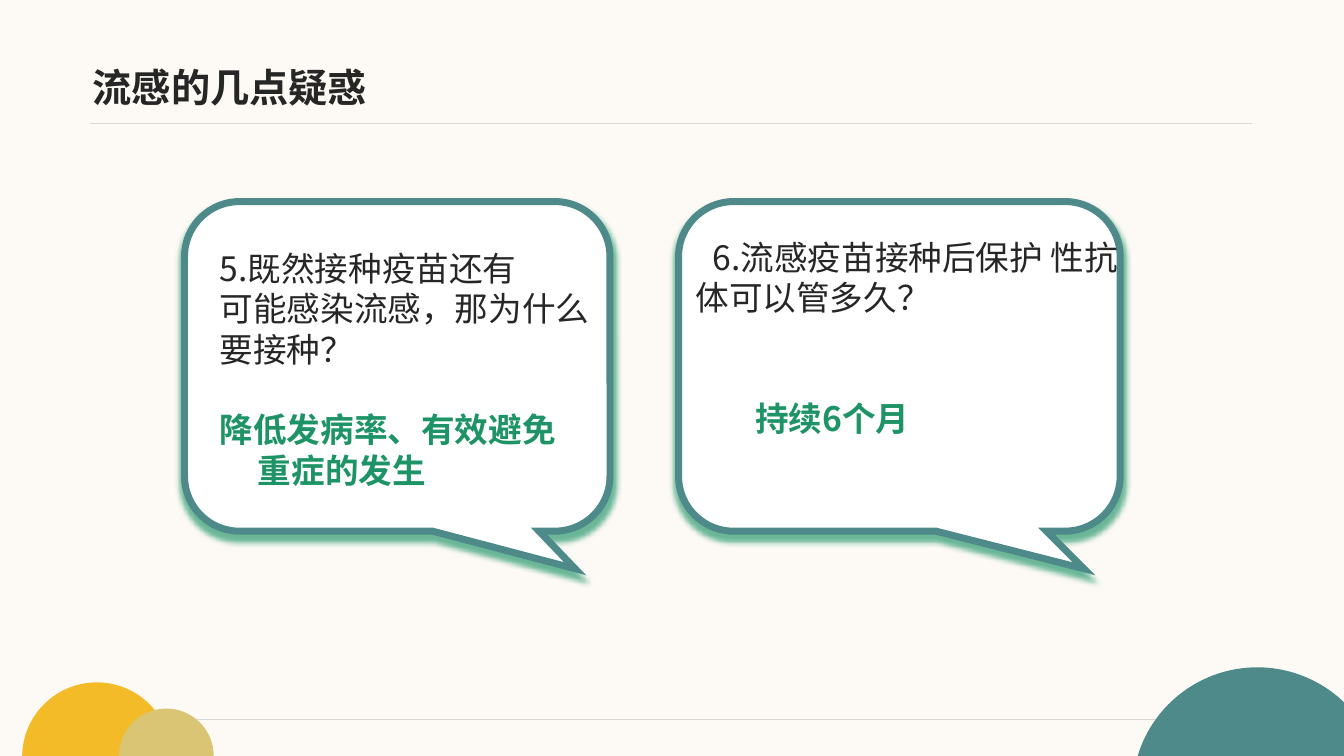
from math import acos, asin, cos, pi, sin, tan

from lxml import etree
from pptx import Presentation
from pptx.dml.color import RGBColor
from pptx.enum.shapes import MSO_CONNECTOR, MSO_SHAPE
from pptx.enum.text import MSO_ANCHOR, PP_ALIGN
from pptx.oxml.ns import qn
from pptx.util import Inches, Pt

CALLOUT = MSO_SHAPE.ROUNDED_RECTANGULAR_CALLOUT
STRAIGHT = MSO_CONNECTOR.STRAIGHT
MIDDLE, TOP, LEFT = MSO_ANCHOR.MIDDLE, MSO_ANCHOR.TOP, PP_ALIGN.LEFT

# Content
TITLE = "流感的几点疑惑"
# Each paragraph: text, first-line indent (in), blank lines above, is answer
QUESTIONS = [
    {"bubble": (1.83, 2, 4.22, 3.27), "text_box": (2.08, 2.41, 4.12, 2.38),
     "paragraphs": [
         ("5.既然接种疫苗还有", 0, 0, False),
         ("可能感染流感，那为什么", 0, 0, False),
         ("要接种？", 0, 0, False),
         ("降低发病率、有效避免", 0, 1, True),
         ("重症的发生", 0.38, 0, True)]},
    {"bubble": (6.73, 2, 4.38, 3.27), "text_box": (6.8, 2.3, 4.39, 2.97),
     "paragraphs": [
         ("6.流感疫苗接种后保护 性抗体可以管多久？", 0.17, 0, False),
         ("持续6个月", 0.59, 2, True)]},
]

# Format
WIDTH, HEIGHT = 13.33, 7.5
TEAL, GREEN, INK, RULE = "4F8A8B", "1E9466", "262626", "D9D9D9"
CJK_FONT = "Noto Sans CJK SC"
LINE_PITCH = 28.8
TAIL = (0.418, 0.614, 0.167)
TITLE_RULE = (0.89, 12.42, 1.22)
FOOT_RULE = (1.69, 11.55, 7.14)
# Circles cut off by the slide edge: centre x, centre y, radius, colour
YELLOW_DISC = (0.96, 7.51, 0.74, "F3BB28")
SAND_DISC = (1.65, 7.5, 0.47, "D9C573")
TEAL_DISC = (12.47, 7.86, 1.24, TEAL)


def color(hex_value):
    return RGBColor.from_string(hex_value)


def add_rule(left, right, y):
    rule = slide.shapes.add_connector(
        STRAIGHT, Inches(left), Inches(y), Inches(right), Inches(y))
    rule.line.color.rgb = color(RULE)
    rule.line.width = Pt(0.5)
    etree.SubElement(rule._element.spPr, qn("a:effectLst"))


def quarter(cx, cy, radius, start, end):
    """Two control points and the end point of an arc."""
    pull = 4 / 3 * tan((end - start) / 4)
    return [(cx + radius * (cos(a) - k * sin(a)), cy - radius * (sin(a) + k * cos(a)))
            for a, k in ((start, pull), (end, -pull), (end, 0))]


def add_disc(cx, cy, radius, fill):
    start = pi - asin((cy - HEIGHT) / radius)
    end = pi - start
    if cx + radius > WIDTH:
        end = acos((WIDTH - cx) / radius)
    first = (cx + radius * cos(start), cy - radius * sin(start))
    outline = [first]
    for span in ((start, pi / 2), (pi / 2, end)):
        outline += quarter(cx, cy, radius, *span)
    outline.append((outline[-1][0], HEIGHT))
    points = [(Inches(x), Inches(y)) for x, y in outline]
    builder = slide.shapes.build_freeform(*points[0], scale=1)
    builder.add_line_segments(points[1:], close=True)
    disc = builder.convert_to_shape()
    # Turn each arc's three points into one curve
    segments = list(disc._element.iter(qn("a:lnTo")))
    for i in (0, 3):
        curve, *others = segments[i:i + 3]
        curve.tag = qn("a:cubicBezTo")
        for other in others:
            curve.append(other[0])
            other.getparent().remove(other)
    disc.shadow.inherit = False
    disc.fill.solid()
    disc.fill.fore_color.rgb = color(fill)
    disc.line.fill.background()


def add_bubble(box):
    bubble = slide.shapes.add_shape(CALLOUT, *map(Inches, box))
    for i, value in enumerate(TAIL):
        bubble.adjustments[i] = value
    bubble.fill.solid()
    bubble.fill.fore_color.rgb = color("FFFFFF")
    bubble.line.color.rgb = color(TEAL)
    bubble.line.width = Pt(5)
    etree.SubElement(bubble.line._get_or_add_ln(), qn("a:miter"), lim="800000")
    # Green shadow straight below
    bubble.shadow.inherit = False
    effects = bubble._element.spPr.find(qn("a:effectLst"))
    shadow = etree.SubElement(
        effects, qn("a:outerShdw"), blurRad=str(Pt(4)), dist=str(Pt(3)),
        dir="5400000", sx="101000", sy="101000", algn="t", rotWithShape="0")
    tint = etree.SubElement(shadow, qn("a:srgbClr"), val=GREEN)
    etree.SubElement(tint, qn("a:alpha"), val="66000")


def add_text_box(box, anchor, margins):
    frame = slide.shapes.add_textbox(*map(Inches, box)).text_frame
    sides = dict(zip(
        ("margin_left", "margin_top", "margin_right", "margin_bottom"),
        map(Inches, margins)))
    for name, value in {"word_wrap": True, "vertical_anchor": anchor, **sides}.items():
        setattr(frame, name, value)
    return frame


def write(paragraph, text, size, font, ink, bold):
    paragraph.alignment = LEFT
    run = paragraph.add_run()
    run.text = text
    for name, value in {"size": Pt(size), "name": font, "bold": bold}.items():
        setattr(run.font, name, value)
    run.font.color.rgb = color(ink)
    etree.SubElement(run._r.get_or_add_rPr(), qn("a:ea"), typeface=CJK_FONT)


def add_question(box, paragraphs):
    frame = add_text_box(box, TOP, (0.1, 0.05, 0.1, 0.05))
    for i, (text, indent, blank_lines, is_answer) in enumerate(paragraphs):
        paragraph = frame.add_paragraph() if i else frame.paragraphs[0]
        paragraph.line_spacing = Pt(LINE_PITCH)
        paragraph.space_before = Pt(LINE_PITCH * blank_lines)
        paragraph._p.get_or_add_pPr().set("indent", str(Inches(indent)))
        write(paragraph, text, 24, CJK_FONT, GREEN if is_answer else INK, is_answer)


prs = Presentation()
prs.slide_width, prs.slide_height = Inches(WIDTH), Inches(HEIGHT)
slide = prs.slides.add_slide(prs.slide_layouts[6])
slide.background.fill.solid()
slide.background.fill.fore_color.rgb = color("FDFAF5")

# Rules and corner circles
add_rule(*TITLE_RULE)
add_disc(*YELLOW_DISC)
add_rule(*FOOT_RULE)
add_disc(*SAND_DISC)
add_disc(*TEAL_DISC)

# Title
title = add_text_box((0.92, 0.39, 11.5, 0.94), MIDDLE, (0, 0, 0, 0))
write(title.paragraphs[0], TITLE, 28, "Arial", INK, True)

# Questions and answers
for question in QUESTIONS:
    add_bubble(question["bubble"])
for question in QUESTIONS:
    add_question(question["text_box"], question["paragraphs"])

prs.save("out.pptx")
